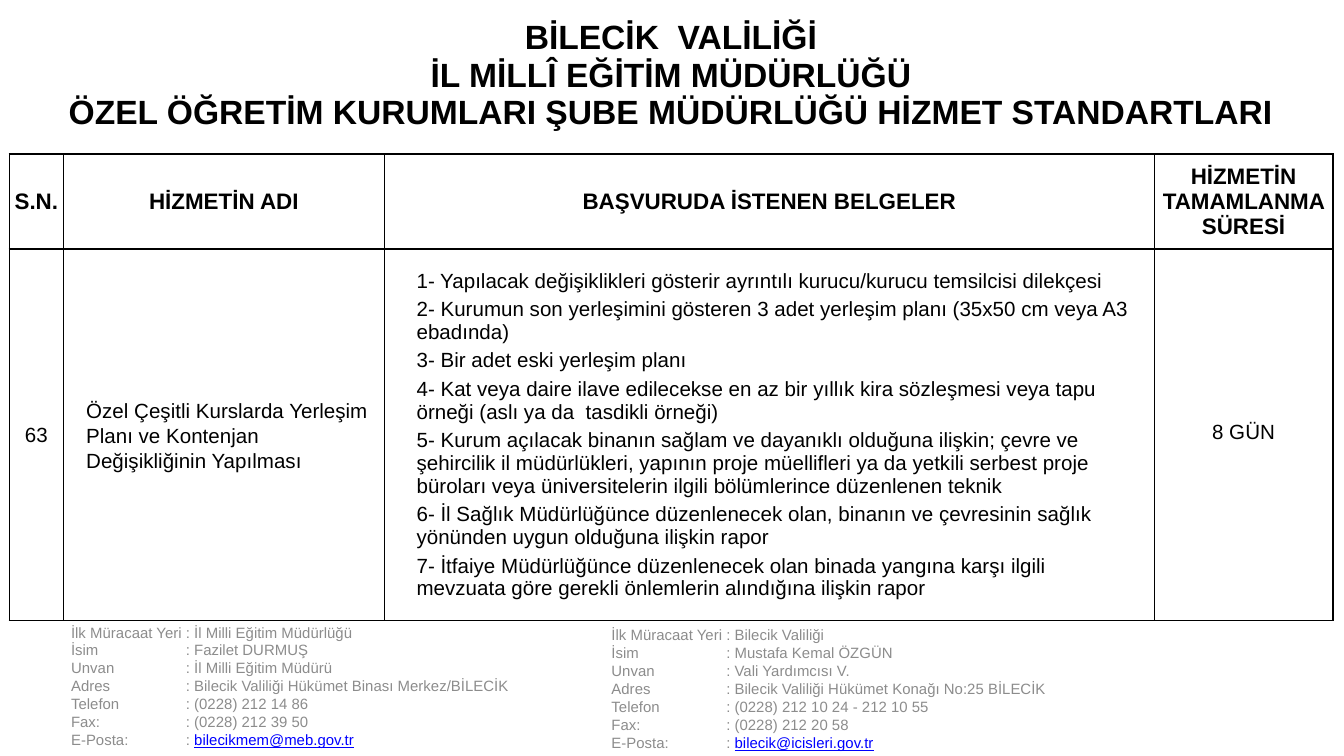
from lxml import etree
from pptx import Presentation
from pptx.dml.color import RGBColor
from pptx.enum.text import MSO_ANCHOR, PP_ALIGN
from pptx.oxml.ns import qn
from pptx.util import Pt

CENTER, LEFT = PP_ALIGN.CENTER, PP_ALIGN.LEFT
MIDDLE, BOTTOM = MSO_ANCHOR.MIDDLE, MSO_ANCHOR.BOTTOM

BLACK = RGBColor(0x00, 0x00, 0x00)
GRAY = RGBColor(0x8C, 0x8C, 0x8C)
BLUE = RGBColor(0x00, 0x00, 0xFF)

FONT = "Arial"
COLUMN_WIDTHS = (29, 172, 412.5, 95.5)
ROW_HEIGHTS = (84, 51, 199)
SIDES = ("L", "R", "T", "B")

TITLE = (
    "BİLECİK  VALİLİĞİ",
    "İL MİLLÎ EĞİTİM MÜDÜRLÜĞÜ",
    "ÖZEL ÖĞRETİM KURUMLARI ŞUBE MÜDÜRLÜĞÜ HİZMET STANDARTLARI",
)
HEADINGS = ("S.N.", "HİZMETİN ADI", "BAŞVURUDA İSTENEN BELGELER",
            "HİZMETİN TAMAMLANMA SÜRESİ")
SERVICE = "Özel Çeşitli Kurslarda Yerleşim Planı ve Kontenjan Değişikliğinin Yapılması"
DOCUMENTS = (
    "1- Yapılacak değişiklikleri gösterir ayrıntılı kurucu/kurucu temsilcisi dilekçesi",
    "2- Kurumun son yerleşimini gösteren 3 adet yerleşim planı (35x50 cm veya A3 ebadında)",
    "3- Bir adet eski yerleşim planı",
    "4- Kat veya daire ilave edilecekse en az bir yıllık kira sözleşmesi veya tapu "
    "örneği (aslı ya da  tasdikli örneği)",
    "5- Kurum açılacak binanın sağlam ve dayanıklı olduğuna ilişkin; çevre ve "
    "şehircilik il müdürlükleri, yapının proje müellifleri ya da yetkili serbest proje "
    "büroları veya üniversitelerin ilgili bölümlerince düzenlenen teknik",
    "6- İl Sağlık Müdürlüğünce düzenlenecek olan, binanın ve çevresinin sağlık "
    "yönünden uygun olduğuna ilişkin rapor",
    "7- İtfaiye Müdürlüğünce düzenlenecek olan binada yangına karşı ilgili "
    "mevzuata göre gerekli önlemlerin alındığına ilişkin rapor",
)

CONTACT_LABELS = ("İlk Müracaat Yeri", "İsim", "Unvan", "Adres", "Telefon",
                  "Fax:", "E-Posta:")
DIRECTORATE = ("İl Milli Eğitim Müdürlüğü", "Fazilet DURMUŞ", "İl Milli Eğitim Müdürü",
               "Bilecik Valiliği Hükümet Binası Merkez/BİLECİK",
               "(0228) 212 14 86", "(0228) 212 39 50", "bilecikmem@meb.gov.tr")
GOVERNORSHIP = ("Bilecik Valiliği", "Mustafa Kemal ÖZGÜN", "Vali Yardımcısı V.",
                "Bilecik Valiliği Hükümet Konağı No:25 BİLECİK",
                "(0228) 212 10 24 - 212 10 55", "(0228) 212 20 58",
                "bilecik@icisleri.gov.tr")


def add_span(para, text, size, color=BLACK, bold=False, underline=False):
    span = para.add_run()
    span.text = text
    font = span.font
    font.name, font.size, font.bold, font.underline = FONT, Pt(size), bold, underline
    font.color.rgb = color


def write(frame, lines, size, bold=False, align=CENTER, indent=0, before=0, spacing=None):
    """Fill a text frame with one paragraph per line."""
    for index, line in enumerate(lines):
        para = frame.add_paragraph() if index else frame.paragraphs[0]
        para.alignment = align
        para.space_before = Pt(before)
        para.line_spacing = spacing
        para._p.get_or_add_pPr().set("marL", str(Pt(indent)))
        add_span(para, line, size, bold=bold)


def set_borders(cell, visible):
    """Draw the named sides in black and clear the others."""
    properties = cell._tc.get_or_add_tcPr()
    for side in SIDES:
        line = etree.SubElement(properties, qn(f"a:ln{side}"), w=str(Pt(1)))
        if side in visible:
            fill = etree.SubElement(line, qn("a:solidFill"))
            etree.SubElement(fill, qn("a:srgbClr"), val=str(BLACK))
        else:
            etree.SubElement(line, qn("a:noFill"))


def fill_cell(cell, lines, size, margins=(0, 0), **text_format):
    cell.vertical_anchor = MIDDLE
    cell.margin_left = cell.margin_right = Pt(margins[0])
    cell.margin_top = cell.margin_bottom = Pt(margins[1])
    write(cell.text_frame, lines, size, **text_format)


def add_service_table(page):
    frame = page.shapes.add_table(len(ROW_HEIGHTS), len(COLUMN_WIDTHS), Pt(5), Pt(-1.5),
                                  Pt(sum(COLUMN_WIDTHS)), Pt(sum(ROW_HEIGHTS)))
    table = frame.table
    table.first_row = table.horz_banding = False
    for column, width in zip(table.columns, COLUMN_WIDTHS):
        column.width = Pt(width)
    for index, (row, height) in enumerate(zip(table.rows, ROW_HEIGHTS)):
        row.height = Pt(height)
        for cell in row.cells:
            set_borders(cell, SIDES if index else ("B",))
            cell.fill.background()

    # Title row across all columns, then the headings
    table.cell(0, 0).merge(table.cell(0, len(COLUMN_WIDTHS) - 1))
    fill_cell(table.cell(0, 0), TITLE, 18, bold=True)
    for index, heading in enumerate(HEADINGS):
        fill_cell(table.cell(1, index), [heading], 12, bold=True)

    # The service itself
    padding = (7.2, 3.6)
    fill_cell(table.cell(2, 0), ["63"], 11)
    fill_cell(table.cell(2, 1), [SERVICE], 11, padding, align=LEFT, indent=5, spacing=1.1)
    fill_cell(table.cell(2, 2), DOCUMENTS, 11, padding, align=LEFT, indent=10, before=3)
    fill_cell(table.cell(2, 3), ["8 GÜN"], 11, padding, spacing=Pt(10))


def add_contact(page, left, top, values):
    """Add a contact block whose colons line up at a tab stop."""
    box = page.shapes.add_textbox(Pt(left), Pt(top), Pt(340), Pt(72))
    frame = box.text_frame
    frame.word_wrap = True
    frame.vertical_anchor = BOTTOM
    for index, (label, value) in enumerate(zip(CONTACT_LABELS, values)):
        para = frame.add_paragraph() if index else frame.paragraphs[0]
        tabs = etree.SubElement(para._p.get_or_add_pPr(), qn("a:tabLst"))
        etree.SubElement(tabs, qn("a:tab"), pos=str(Pt(61.5)), algn="l")
        add_span(para, f"{label}\t: ", 8, GRAY)
        is_mail = "@" in value
        add_span(para, value, 8, BLUE if is_mail else GRAY, underline=is_mail)


def main():
    deck = Presentation()
    deck.slide_width, deck.slide_height = Pt(720), Pt(405)
    page = deck.slides.add_slide(deck.slide_layouts[6])
    add_contact(page, 31, 332.5, DIRECTORATE)
    add_contact(page, 320.5, 334, GOVERNORSHIP)
    add_service_table(page)
    deck.save("out.pptx")


if __name__ == "__main__":
    main()
